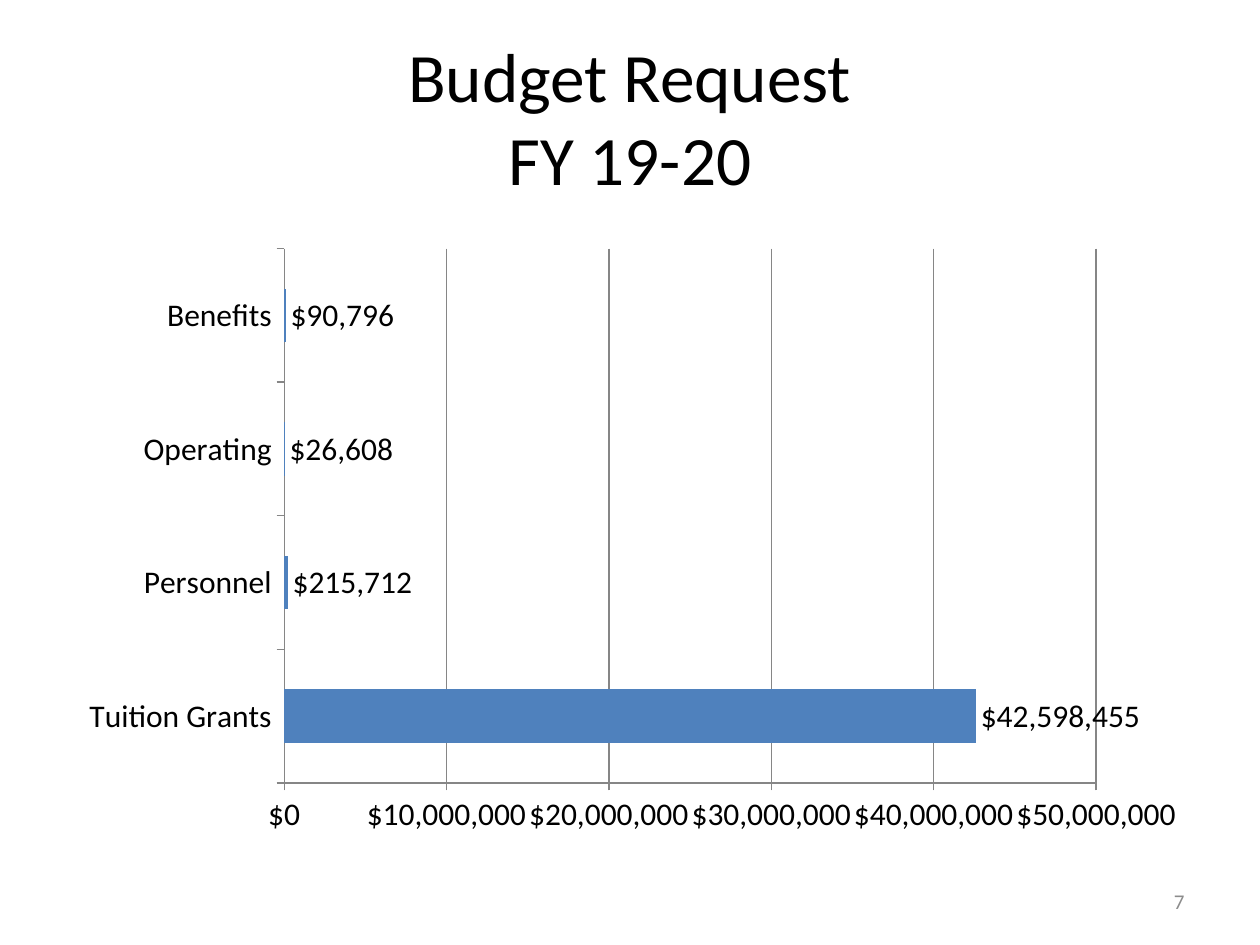
from lxml.etree import SubElement
from pptx import Presentation
from pptx.chart.data import CategoryChartData
from pptx.dml.color import RGBColor
from pptx.enum.chart import XL_CHART_TYPE, XL_LABEL_POSITION, XL_TICK_MARK
from pptx.enum.text import MSO_ANCHOR, PP_ALIGN
from pptx.oxml.ns import qn
from pptx.util import Inches, Pt

FONT = "Calibri"
BLACK = RGBColor(0x00, 0x00, 0x00)
GRAY = RGBColor(0x8C, 0x8C, 0x8C)
AXIS_GRAY = RGBColor(0x86, 0x86, 0x86)
BLUE = RGBColor(0x4F, 0x81, 0xBD)

DOLLARS = '"$"#,##0'
BUDGET = {
    "Tuition Grants": 42598455,
    "Personnel": 215712,
    "Operating": 26608,
    "Benefits": 90796,
}


def format_font(font, size, color):
    font.name = FONT
    font.size = Pt(size)
    font.color.rgb = color


def place(shape, left, top, width, height):
    shape.left, shape.top = Inches(left), Inches(top)
    shape.width, shape.height = Inches(width), Inches(height)


def write_text(shape, text, size, color=BLACK, align=PP_ALIGN.LEFT):
    """Fill a shape with one paragraph; a vertical tab is a line break."""
    frame = shape.text_frame
    frame.word_wrap = True
    frame.vertical_anchor = MSO_ANCHOR.MIDDLE
    para = frame.paragraphs[0]
    para.text = text
    para.alignment = align
    for span in para.runs:
        format_font(span.font, size, color)


def set_plot_layout(chart, **fractions):
    """Fix the inner plot area, in fractions of the chart frame."""
    plot_area = chart._chartSpace.chart.plotArea
    for old_layout in plot_area.findall(qn("c:layout")):
        plot_area.remove(old_layout)
    layout = SubElement(plot_area, qn("c:layout"))
    plot_area.insert(0, layout)
    manual = SubElement(layout, qn("c:manualLayout"))
    settings = {"layoutTarget": "inner", "xMode": "edge", "yMode": "edge", **fractions}
    for name, value in settings.items():
        SubElement(manual, qn(f"c:{name}")).set("val", str(value))


def format_axis(axis):
    axis.major_tick_mark = XL_TICK_MARK.OUTSIDE
    axis.minor_tick_mark = XL_TICK_MARK.NONE
    axis.format.line.color.rgb = AXIS_GRAY
    axis.format.line.width = Pt(0.75)


def add_budget_chart(page, left, top, width, height):
    data = CategoryChartData(number_format=DOLLARS)
    data.categories = list(BUDGET)
    data.add_series("Series 1", list(BUDGET.values()))
    frame = page.shapes.add_chart(
        XL_CHART_TYPE.BAR_CLUSTERED,
        Inches(left), Inches(top), Inches(width), Inches(height), data,
    )
    chart = frame.chart
    chart.has_legend = False
    chart.has_title = False
    format_font(chart.font, 18, BLACK)
    set_plot_layout(chart, x=0.195, y=0.045, w=0.716, h=0.857)

    # Axes and gridlines
    format_axis(chart.category_axis)
    value_axis = chart.value_axis
    format_axis(value_axis)
    value_axis.minimum_scale = 0
    value_axis.maximum_scale = 50_000_000
    value_axis.major_unit = 10_000_000
    value_axis.tick_labels.number_format = DOLLARS
    value_axis.tick_labels.number_format_is_linked = False
    value_axis.has_major_gridlines = True
    grid_line = value_axis.major_gridlines.format.line
    grid_line.color.rgb = AXIS_GRAY
    grid_line.width = Pt(0.75)

    # Bars and value labels
    plot = chart.plots[0]
    plot.gap_width = 150
    plot.vary_by_categories = False
    fill = plot.series[0].format.fill
    fill.solid()
    fill.fore_color.rgb = BLUE
    plot.has_data_labels = True
    labels = plot.data_labels
    labels.show_value = True
    labels.number_format = DOLLARS
    labels.number_format_is_linked = False
    labels.position = XL_LABEL_POSITION.OUTSIDE_END
    format_font(labels.font, 18, BLACK)


def main():
    deck = Presentation()
    deck.slide_width, deck.slide_height = Inches(10), Inches(7.5)
    page = deck.slides.add_slide(deck.slide_layouts[5])

    # Title
    title = page.shapes.title
    place(title, 0.5, 0.3, 9, 1.25)
    write_text(title, "Budget Request\vFY 19-20", 39.6, align=PP_ALIGN.CENTER)

    add_budget_chart(page, 0.5, 1.75, 9, 4.95)

    # Page number
    box = page.shapes.add_textbox(Inches(7.17), Inches(6.95), Inches(2.33), Inches(0.4))
    write_text(box, "7", 12, color=GRAY, align=PP_ALIGN.RIGHT)

    deck.save("out.pptx")


if __name__ == "__main__":
    main()
